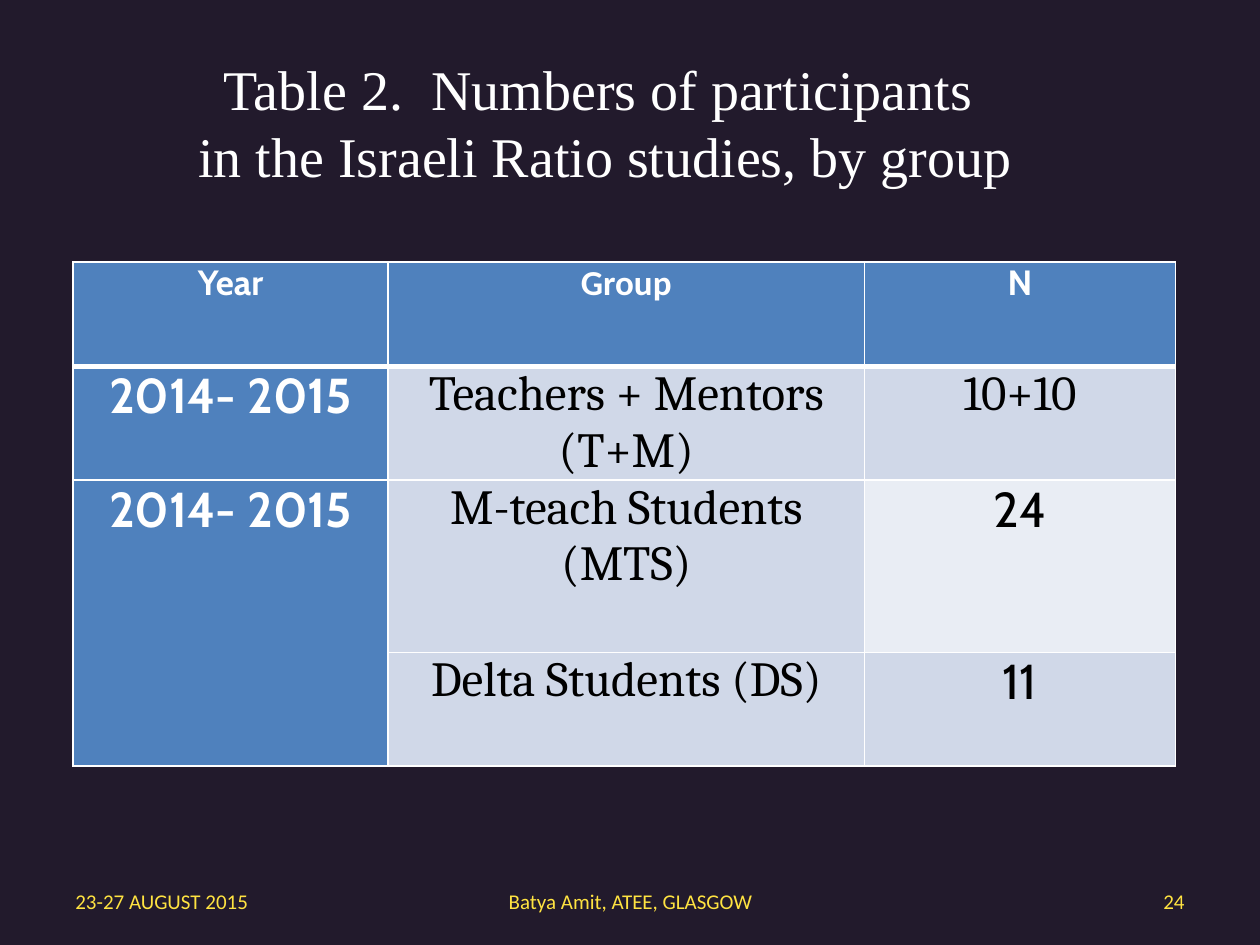
"""Build a slide with a table of participant numbers by study group."""
from lxml import etree
from pptx import Presentation, util as u
from pptx.dml.color import RGBColor
from pptx.enum import text
from pptx.oxml import ns

COLORS = {
    "background": "221A2C", "white": "FFFFFF", "black": "000000",
    "header": "4F81BD", "band": "D0D8E8", "pale": "E9EDF4", "footer": "FFE341",
}
ALIGN = {"left": text.PP_ALIGN.LEFT, "center": text.PP_ALIGN.CENTER, "right": text.PP_ALIGN.RIGHT}
COLUMNS = [2.5, 3.78, 2.47]
ROWS = [0.83, 0.9, 1.37, 0.9]
HEADINGS = [("Year", "Cabin"), ("Group", "Calibri"), ("N", "Cabin")]
BODY = [
    ("2014- 2015", "Teachers + Mentors\n(T+M)", "10+10", "Cambria", "band"),
    ("2014- 2015", "M-teach Students (MTS)", "24", "Cabin", "pale"),
    ("", "Delta Students (DS)", "11", "Cabin", "band"),
]


def color(name):
    """Return the named colour."""
    return RGBColor.from_string(COLORS[name])


def write(frame, content, size, font, ink, align="center", bold=False):
    """Fill a text frame with one paragraph per line of content."""
    frame.text = content
    for paragraph in frame.paragraphs:
        paragraph.alignment = ALIGN[align]
        for run in paragraph.runs:
            run.font.size = u.Pt(size)
            run.font.name = font
            run.font.bold = bold
            run.font.color.rgb = color(ink)


def add_border(cell, widths):
    """Draw white lines on the left, right, top and bottom of a cell."""
    properties = cell._tc.get_or_add_tcPr()
    for side, width in zip("LRTB", widths):
        line = etree.SubElement(properties, ns.qn(f"a:ln{side}"), w=str(u.Pt(width)))
        solid = etree.SubElement(line, ns.qn("a:solidFill"))
        etree.SubElement(solid, ns.qn("a:srgbClr"), val=COLORS["white"])


def fill_cell(cell, content, fill, widths, **style):
    """Format one table cell and write its text."""
    cell.margin_left = cell.margin_right = u.Inches(0.07)
    cell.margin_top = cell.margin_bottom = 0
    add_border(cell, widths)
    cell.fill.solid()
    cell.fill.fore_color.rgb = color(fill)
    if content:
        write(cell.text_frame, content, **style)


def add_title(slide):
    """Place the two-line heading in the title placeholder."""
    title = slide.shapes.title
    title.left, title.top = u.Inches(1.33), u.Inches(0.33)
    title.width, title.height = u.Inches(6.84), u.Inches(1.3)
    frame = title.text_frame
    frame.word_wrap = False
    frame.auto_size = text.MSO_AUTO_SIZE.NONE
    frame.vertical_anchor = text.MSO_ANCHOR.TOP
    frame.margin_top = u.Inches(0.1)
    write(frame, "Table 2.  Numbers of participants\n in the Israeli Ratio studies, by group",
          size=32, font="Times New Roman", ink="white")


def add_participants(slide):
    """Add the table of years, groups and numbers."""
    frame = slide.shapes.add_table(len(ROWS), len(COLUMNS), u.Inches(0.58), u.Inches(2.08),
                                   u.Inches(sum(COLUMNS)), u.Inches(sum(ROWS)))
    table = frame.table
    for column, width in zip(table.columns, COLUMNS):
        column.width = u.Inches(width)
    for row, height in zip(table.rows, ROWS):
        row.height = u.Inches(height)
    for index, (heading, font) in enumerate(HEADINGS):
        fill_cell(table.cell(0, index), heading, "header", (1, 1, 1, 3),
                  size=20, font=font, ink="white", bold=True)
    for index, (year, group, number, font, shade) in enumerate(BODY, start=1):
        widths = (1, 1, 3 if index == 1 else 1, 1)
        entries = [(year, "header", "Cabin", "white", True),
                   (group, "band", "Cambria", "black", False),
                   (number, shade, font, "black", False)]
        for column, (content, fill, face, ink, bold) in enumerate(entries):
            fill_cell(table.cell(index, column), content, fill, widths,
                      size=28, font=face, ink=ink, bold=bold)
    table.cell(2, 0).merge(table.cell(3, 0))


def add_footer(slide, content, left, width, align):
    """Add one footer text."""
    box = slide.shapes.add_textbox(u.Inches(left), u.Inches(6.95), u.Inches(width), u.Inches(0.4))
    box.text_frame.word_wrap = True
    box.text_frame.vertical_anchor = text.MSO_ANCHOR.MIDDLE
    write(box.text_frame, content, size=12, font="Calibri", ink="footer", align=align)


def main():
    """Build and save the slide."""
    presentation = Presentation()
    presentation.slide_width, presentation.slide_height = u.Inches(10), u.Inches(7.5)
    slide = presentation.slides.add_slide(presentation.slide_layouts[5])
    slide.background.fill.solid()
    slide.background.fill.fore_color.rgb = color("background")
    add_participants(slide)
    add_footer(slide, "23-27 AUGUST 2015", 0.5, 2.33, "left")
    add_footer(slide, "Batya Amit, ATEE, GLASGOW", 3.42, 3.17, "center")
    add_footer(slide, "24", 7.17, 2.33, "right")
    add_title(slide)
    presentation.save("out.pptx")


if __name__ == "__main__":
    main()
